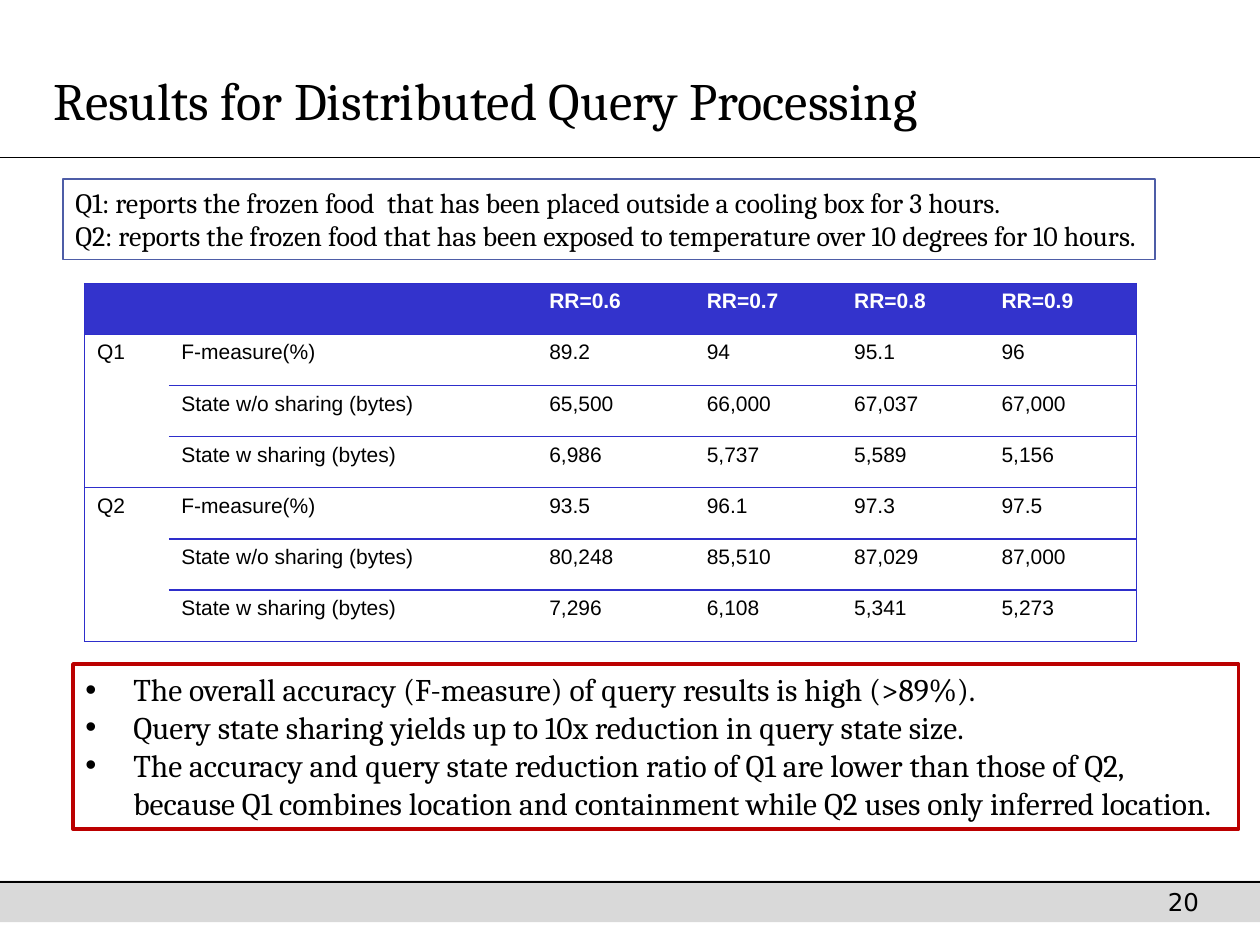
from lxml import etree
from pptx import Presentation
from pptx.dml.color import RGBColor
from pptx.enum.shapes import MSO_CONNECTOR, MSO_SHAPE
from pptx.enum.text import MSO_ANCHOR, PP_ALIGN
from pptx.oxml import parse_xml
from pptx.oxml.ns import nsdecls, qn
from pptx.util import Inches, Pt

BLACK = RGBColor(0x00, 0x00, 0x00)
WHITE = RGBColor(0xFF, 0xFF, 0xFF)
GRAY = RGBColor(0xD9, 0xD9, 0xD9)
RED = RGBColor(0xBB, 0x00, 0x00)
SLATE = RGBColor(0x4E, 0x5D, 0xA7)
HEADER_BLUE = RGBColor(0x33, 0x33, 0xCC)
BORDER_BLUE = RGBColor(0x2E, 0x2E, 0xCB)
PLAIN_TABLE = "{2D5ABB26-0587-4C30-8999-92F81FD0307C}"

# Content
TITLE = "Results for Distributed Query Processing"
PAGE_NUMBER = "20"
QUERIES = [
    "Q1: reports the frozen food  that has been placed outside a cooling box for 3 hours.",
    "Q2: reports the frozen food that has been exposed to temperature over 10 degrees for 10 hours.",
]
FINDINGS = [
    "The overall accuracy (F-measure) of query results is high (>89%).",
    "Query state sharing yields up to 10x reduction in query state size.",
    "The accuracy and query state reduction ratio of Q1 are lower than those of Q2, "
    "because Q1 combines location and containment while Q2 uses only inferred location.",
]
HEADER = ["", "", "RR=0.6", "RR=0.7", "RR=0.8", "RR=0.9"]
MEASURES = ["F-measure(%)", "State w/o sharing (bytes)", "State w sharing (bytes)"]
RESULTS = {
    "Q1": [
        ["89.2", "94", "95.1", "96"],
        ["65,500", "66,000", "67,037", "67,000"],
        ["6,986", "5,737", "5,589", "5,156"],
    ],
    "Q2": [
        ["93.5", "96.1", "97.3", "97.5"],
        ["80,248", "85,510", "87,029", "87,000"],
        ["7,296", "6,108", "5,341", "5,273"],
    ],
}
COLUMN_WIDTHS = [0.67, 2.92, 1.25, 1.17, 1.17, 1.17]
ROW_HEIGHT = 2.84 / 7


def write(shape, lines, size, font="Cambria", anchor=MSO_ANCHOR.TOP, bulleted=False):
    frame = shape.text_frame
    frame.word_wrap = True
    frame.vertical_anchor = anchor
    frame.text = "\n".join(lines)
    for para in frame.paragraphs:
        para.alignment = PP_ALIGN.LEFT
        if bulleted:
            props = para._p.get_or_add_pPr()
            props.set("marL", str(Inches(0.38)))
            props.set("indent", str(-Inches(0.38)))
            etree.SubElement(props, qn("a:buFont")).set("typeface", "Arial")
            etree.SubElement(props, qn("a:buChar")).set("char", "•")
        para.font.name = font
        para.font.size = Pt(size)
        para.font.color.rgb = BLACK


def add_box(page, *bounds, fill=None, line=None, width=1):
    box = page.shapes.add_shape(MSO_SHAPE.RECTANGLE, *map(Inches, bounds))
    box.shadow.inherit = False
    if fill is None:
        box.fill.background()
    else:
        box.fill.solid()
        box.fill.fore_color.rgb = fill
    if line is None:
        box.line.fill.background()
    else:
        box.line.color.rgb = line
        box.line.width = Pt(width)
    return box


def add_rule(page, top):
    rule = page.shapes.add_connector(
        MSO_CONNECTOR.STRAIGHT, 0, Inches(top), Inches(10), Inches(top))
    rule.line.color.rgb = BLACK
    rule.line.width = Pt(1)
    etree.SubElement(rule._element.spPr, qn("a:effectLst"))


def add_border(cell, sides):
    props = cell._tc.get_or_add_tcPr()
    for side in sides:
        props.append(parse_xml(
            f'<a:ln{side} {nsdecls("a")} w="{Pt(0.75)}"><a:solidFill>'
            f'<a:srgbClr val="{BORDER_BLUE}"/></a:solidFill></a:ln{side}>'))


def add_results(page):
    rows = [HEADER]
    for query, values in RESULTS.items():
        for index, (measure, numbers) in enumerate(zip(MEASURES, values)):
            rows.append([query if index == 0 else "", measure, *numbers])
    last_column = len(HEADER) - 1
    group = len(MEASURES)

    frame = page.shapes.add_table(
        len(rows), len(HEADER), Inches(0.67), Inches(2.25),
        Inches(sum(COLUMN_WIDTHS)), Inches(ROW_HEIGHT * len(rows)))
    table = frame.table
    table._tbl.tblPr.find(qn("a:tableStyleId")).text = PLAIN_TABLE
    table.first_row = table.horz_banding = False
    for column, width in zip(table.columns, COLUMN_WIDTHS):
        column.width = Inches(width)

    for r, row in enumerate(rows):
        table.rows[r].height = Inches(ROW_HEIGHT)
        for c, text in enumerate(row):
            cell = table.cell(r, c)
            cell.text = text
            font = cell.text_frame.paragraphs[0].font
            font.name = "Arial"
            font.size = Pt(12)
            font.bold = r == 0
            font.color.rgb = WHITE if r == 0 else BLACK
            # The merged query column has lines only around each group
            sides = {0: "L", last_column: "R"}.get(c, "")
            if c > 0 or r == 0 or r % group == 1:
                sides += "T"
            if c > 0 or r % group != 2:
                sides += "B"
            add_border(cell, sides)
            if r == 0:
                cell.fill.solid()
                cell.fill.fore_color.rgb = HEADER_BLUE
            else:
                cell.fill.background()
    for top in range(1, len(rows), group):
        table.cell(top, 0).merge(table.cell(top + group - 1, 0))


def main():
    deck = Presentation()
    deck.slide_width, deck.slide_height = Inches(10), Inches(7.5)
    page = deck.slides.add_slide(deck.slide_layouts[6])

    # Footer band, page number and rules
    add_box(page, 0, 6.99, 10, 0.33, fill=GRAY)
    add_rule(page, 1.25)
    number = page.shapes.add_textbox(*map(Inches, (9.17, 6.99, 0.67, 0.34)))
    write(number, [PAGE_NUMBER], 14, font="DejaVu Sans")
    add_rule(page, 7)

    # Title
    title = page.shapes.add_textbox(*map(Inches, (0.33, 0.5, 9.67, 0.58)))
    write(title, [TITLE], 30, anchor=MSO_ANCHOR.MIDDLE)

    # Findings, queries and results
    findings = add_box(page, 0.58, 5.27, 9.25, 1.31, line=RED, width=2.25)
    write(findings, FINDINGS, 18, bulleted=True)
    queries = add_box(page, 0.5, 1.42, 8.67, 0.64, line=SLATE)
    write(queries, QUERIES, 16)
    add_results(page)

    deck.save("out.pptx")


if __name__ == "__main__":
    main()
